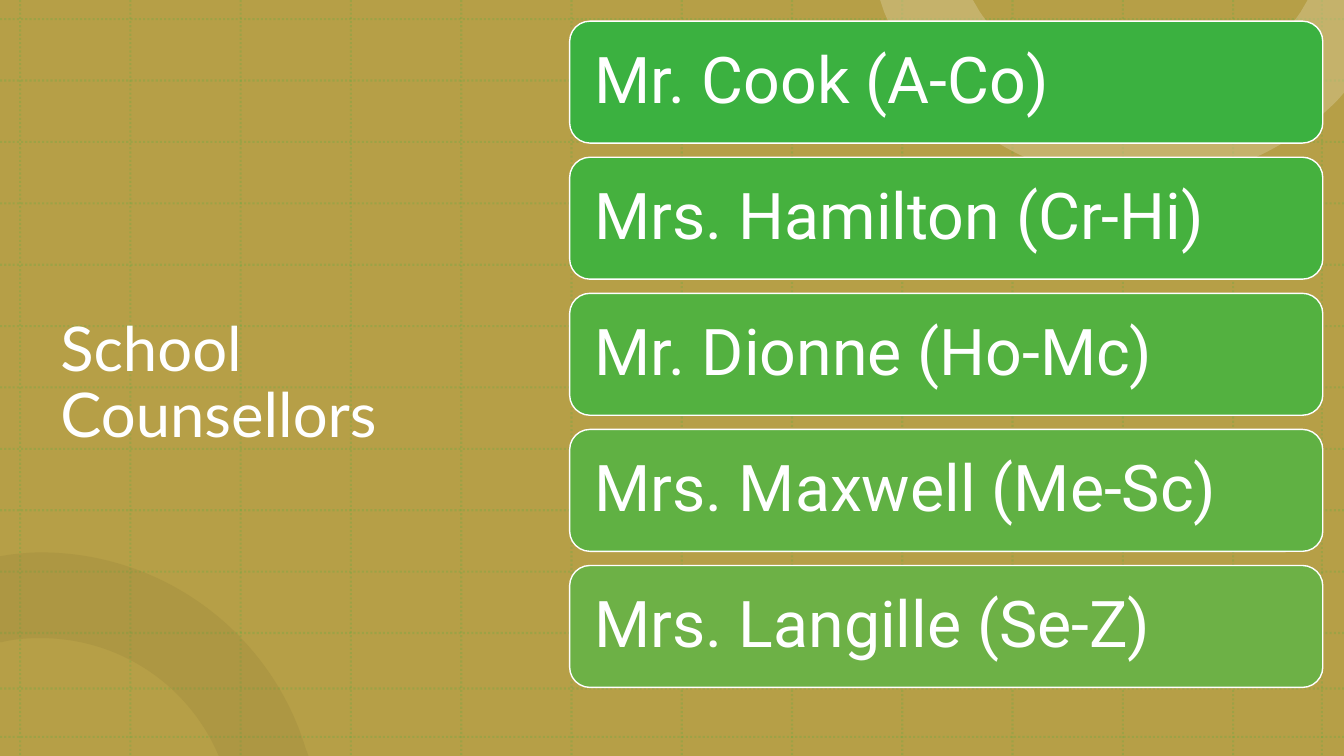
"""Build the School Counsellors slide."""
from dataclasses import dataclass

from lxml import etree
from pptx import Presentation
from pptx.dml.color import RGBColor
from pptx.enum.dml import MSO_LINE
from pptx.enum.shapes import MSO_CONNECTOR, MSO_SHAPE
from pptx.enum.text import MSO_ANCHOR, PP_ALIGN
from pptx.oxml.ns import qn
from pptx.util import Inches, Pt

RECT, ROUND_RECT = MSO_SHAPE.RECTANGLE, MSO_SHAPE.ROUNDED_RECTANGLE
STRAIGHT, DOTTED = MSO_CONNECTOR.STRAIGHT, MSO_LINE.ROUND_DOT
MIDDLE, LEFT = MSO_ANCHOR.MIDDLE, PP_ALIGN.LEFT

WHITE = RGBColor(0xFF, 0xFF, 0xFF)
GOLD = RGBColor(0xB6, 0x9F, 0x47)
GREEN = RGBColor(0x3B, 0xB1, 0x40)
BROWN = RGBColor(0x89, 0x77, 0x35)
SAND = RGBColor(0xD4, 0xC6, 0x90)

WIDTH, HEIGHT = 13.33, 7.5
CARD_TOP, CARD_PITCH = 0.21, 1.35

Point = tuple[float, float]


@dataclass
class Ring:
    """A ring outline: one point per straight segment, three per curve."""
    start: Point
    segments: list[tuple[Point, ...]]
    color: RGBColor
    alpha: int


@dataclass
class Counsellor:
    """A card's label and fill."""
    label: str
    color: RGBColor


RINGS = [
    Ring((0.4, 5.48), [
        ((1.64, 5.48), (2.69, 6.3), (3.03, 7.42)),
        ((3.06, 7.5),),
        ((2.17, 7.5),),
        ((1.88, 6.81), (1.2, 6.33), (0.4, 6.33)),
        ((0.27, 6.33), (0.14, 6.34), (0.02, 6.37)),
        ((-0.01, 6.37),),
        ((-0.01, 5.52),),
        ((0.12, 5.5),),
        ((0.21, 5.49), (0.31, 5.48), (0.4, 5.48)),
    ], BROWN, 20),
    Ring((8.73, 0), [
        ((9.65, 0),),
        ((9.72, 0.12),),
        ((10.07, 0.63), (10.65, 0.96), (11.31, 0.96)),
        ((11.97, 0.96), (12.55, 0.63), (12.9, 0.12)),
        ((12.97, 0),),
        ((13.33, 0),),
        ((13.33, 0.92),),
        ((13.26, 1),),
        ((12.76, 1.5), (12.07, 1.81), (11.31, 1.81)),
        ((10.17, 1.81), (9.19, 1.11), (8.77, 0.12)),
    ], SAND, 50),
]
COUNSELLORS = [
    Counsellor("Mr. Cook (A-Co)", GREEN),
    Counsellor("Mrs. Hamilton (Cr-Hi)", RGBColor(0x45, 0xB1, 0x3E)),
    Counsellor("Mr. Dionne (Ho-Mc)", RGBColor(0x53, 0xB1, 0x40)),
    Counsellor("Mrs. Maxwell (Me-Sc)", RGBColor(0x60, 0xB1, 0x43)),
    Counsellor("Mrs. Langille (Se-Z)", RGBColor(0x6D, 0xB1, 0x46)),
]


def set_alpha(element, percent: int) -> None:
    """Make the solid colour inside an element partly transparent."""
    color = next(element.iter(qn("a:srgbClr")))
    etree.SubElement(color, qn("a:alpha")).set("val", str(percent * 1000))


def set_fill(sp, color: RGBColor) -> None:
    """Give a shape a plain fill without shadow."""
    sp.shadow.inherit = False
    sp.fill.solid()
    sp.fill.fore_color.rgb = color


def even_steps(first: float, last: float, count: int) -> list[float]:
    """Return evenly spaced positions."""
    return [first + (last - first) * i / (count - 1) for i in range(count)]


def add_grid_line(shapes, x1: float, y1: float, x2: float, y2: float) -> None:
    """Draw one faint dotted line."""
    line = shapes.add_connector(STRAIGHT, Inches(x1), Inches(y1), Inches(x2), Inches(y2))
    line.line.color.rgb = GREEN
    line.line.width = Pt(1.5)
    line.line.dash_style = DOTTED
    properties = line._element.spPr
    set_alpha(properties, 20)
    etree.SubElement(properties, qn("a:effectLst"))


def add_background(shapes) -> None:
    """Draw the gold backdrop and its grid."""
    sp = shapes.add_shape(RECT, 0, 0, Inches(WIDTH), Inches(HEIGHT))
    set_fill(sp, GOLD)
    sp.line.fill.background()
    for x in even_steps(0.2, 12.23, 12) + [13.11]:
        add_grid_line(shapes, x, 0, x, HEIGHT)
    for y in even_steps(0.19, 6.28, 11) + [6.83, 7.31]:
        add_grid_line(shapes, 0, y, WIDTH, y)


def add_ring(shapes, ring: Ring) -> None:
    """Draw a ring outline with its curved segments."""
    builder = shapes.build_freeform(Inches(ring.start[0]), Inches(ring.start[1]))
    builder.add_line_segments([(Inches(x), Inches(y)) for *_, (x, y) in ring.segments])
    sp = builder.convert_to_shape()
    lines = list(sp._element.iter(qn("a:lnTo")))
    for line, segment in zip(lines, ring.segments):
        if len(segment) == 3:
            line.tag = qn("a:cubicBezTo")
            line.clear()
            for x, y in segment:
                pt = etree.SubElement(line, qn("a:pt"))
                pt.set("x", str(Inches(x) - sp.left))
                pt.set("y", str(Inches(y) - sp.top))
    set_fill(sp, ring.color)
    set_alpha(sp._element.spPr, ring.alpha)
    sp.line.fill.background()


def set_text(sp, text: str, font: str, size: int, inset: float) -> None:
    """Fill a shape with left-aligned white text."""
    tf = sp.text_frame
    tf.word_wrap = True
    tf.vertical_anchor = MIDDLE
    tf.margin_left = tf.margin_right = Inches(inset)
    p = tf.paragraphs[0]
    p.text = text
    p.alignment = LEFT
    p.line_spacing = 0.9
    p.font.name = font
    p.font.size = Pt(size)
    p.font.color.rgb = WHITE


def add_card(shapes, counsellor: Counsellor, top: float) -> None:
    """Draw one counsellor card."""
    sp = shapes.add_shape(ROUND_RECT, Inches(5.65), Inches(top), Inches(7.47), Inches(1.21))
    set_fill(sp, counsellor.color)
    sp.line.color.rgb = WHITE
    sp.line.width = Pt(1)
    set_text(sp, counsellor.label, "Roboto", 46, 0.19)


def main() -> None:
    """Build and save the presentation."""
    prs = Presentation()
    prs.slide_width, prs.slide_height = Inches(WIDTH), Inches(HEIGHT)
    s = prs.slides.add_slide(prs.slide_layouts[6])
    add_background(s.shapes)
    for ring in RINGS:
        add_ring(s.shapes, ring)
    title = s.shapes.add_textbox(Inches(0.5), Inches(0.79), Inches(4.08), Inches(6.05))
    set_text(title, "School Counsellors", "Lato", 44, 0.1)
    for i, counsellor in enumerate(COUNSELLORS):
        add_card(s.shapes, counsellor, CARD_TOP + CARD_PITCH * i)
    prs.save("out.pptx")


if __name__ == "__main__":
    main()
